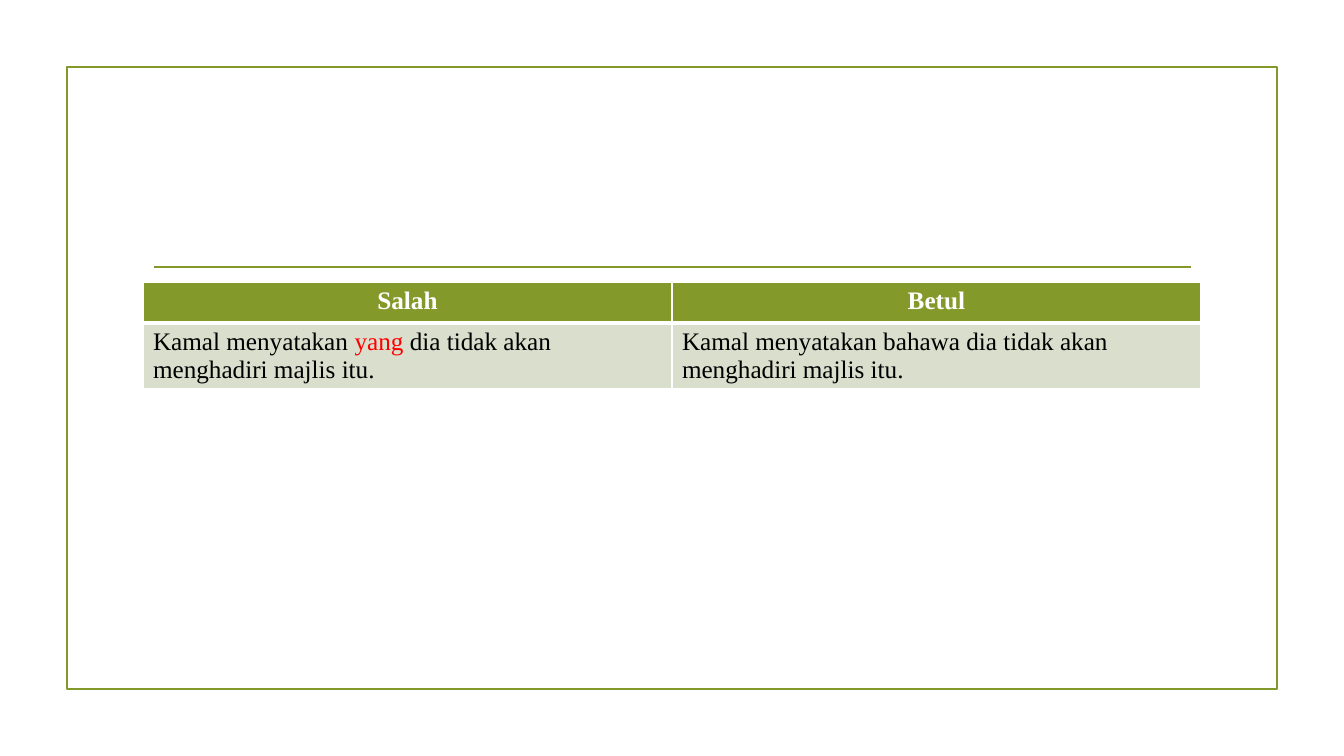
from dataclasses import dataclass

import pptx
import pptx.dml.color
import pptx.enum.shapes
import pptx.enum.text
import pptx.oxml.ns
import pptx.util
from lxml import etree

EMU_PER_PX = 914400 / 100.8
GREEN, PALE, WHITE, BLACK, RED = "83992A", "D9DECD", "FFFFFF", "000000", "FF0000"
FONT = {"name": "Times New Roman", "size": pptx.util.Pt(18)}
LINE_WIDTH = pptx.util.Pt(1.25)


@dataclass
class Span:
    text: str
    color: str = BLACK


@dataclass
class RowStyle:
    height: int
    fill: str
    bold: bool
    align: pptx.enum.text.PP_ALIGN
    bottom_border: float


HEADER = RowStyle(41, GREEN, True, pptx.enum.text.PP_ALIGN.CENTER, 3)
BODY = RowStyle(64, PALE, False, pptx.enum.text.PP_ALIGN.LEFT, 1)
ROWS = [
    (HEADER, [[Span("Salah", WHITE)], [Span("Betul", WHITE)]]),
    (BODY, [
        [Span("Kamal menyatakan"), Span(" yang ", RED),
         Span("dia tidak akan menghadiri majlis itu.")],
        [Span("Kamal menyatakan bahawa dia tidak akan menghadiri majlis itu.")],
    ]),
]
COLUMN_WIDTH = 529


def px(length: int) -> int:
    return round(length * EMU_PER_PX)


def rgb(color: str) -> pptx.dml.color.RGBColor:
    return pptx.dml.color.RGBColor.from_string(color)


def style_line(line) -> None:
    line.color.rgb = rgb(GREEN)
    line.width = LINE_WIDTH


def add_frame(page) -> None:
    frame = page.shapes.add_shape(
        pptx.enum.shapes.MSO_SHAPE.RECTANGLE, px(67), px(67), px(1210), px(622))
    frame.shadow.inherit = False
    frame.fill.background()
    style_line(frame.line)


def add_rule(page) -> None:
    rule = page.shapes.add_connector(
        pptx.enum.shapes.MSO_CONNECTOR.STRAIGHT, px(154), px(267), px(1191), px(267))
    etree.SubElement(rule.element.spPr, pptx.oxml.ns.qn("a:effectLst"))
    style_line(rule.line)


def add_borders(cell, bottom_width: float) -> None:
    """Give the cell white borders; call before filling it, as the XML order matters."""
    properties = cell._tc.get_or_add_tcPr()
    for side, width in {"L": 1, "R": 1, "T": 1, "B": bottom_width}.items():
        border = etree.SubElement(properties, pptx.oxml.ns.qn(f"a:ln{side}"),
                                  w=str(pptx.util.Pt(width)))
        fill = etree.SubElement(border, pptx.oxml.ns.qn("a:solidFill"))
        etree.SubElement(fill, pptx.oxml.ns.qn("a:srgbClr"), val=WHITE)


def fill_cell(cell, spans: list[Span], style: RowStyle) -> None:
    add_borders(cell, style.bottom_border)
    cell.fill.solid()
    cell.fill.fore_color.rgb = rgb(style.fill)
    para = cell.text_frame.paragraphs[0]
    para.alignment = style.align
    for span in spans:
        run = para.add_run()
        run.text = span.text
        for name, value in {**FONT, "bold": style.bold}.items():
            setattr(run.font, name, value)
        run.font.color.rgb = rgb(span.color)


def add_comparison(page) -> None:
    column_count = len(ROWS[0][1])
    table = page.shapes.add_table(
        len(ROWS), column_count, px(143), px(282), px(COLUMN_WIDTH * column_count),
        px(sum(style.height for style, _ in ROWS))).table
    for column in table.columns:
        column.width = px(COLUMN_WIDTH)
    for row, (style, texts) in zip(table.rows, ROWS):
        row.height = px(style.height)
        for cell, spans in zip(row.cells, texts):
            fill_cell(cell, spans, style)


def main() -> None:
    deck = pptx.Presentation()
    deck.slide_width, deck.slide_height = px(1344), px(756)
    page = deck.slides.add_slide(deck.slide_layouts[6])
    page.background.fill.solid()
    page.background.fill.fore_color.rgb = rgb(WHITE)
    add_frame(page)
    add_rule(page)
    add_comparison(page)
    deck.save("out.pptx")


if __name__ == "__main__":
    main()
